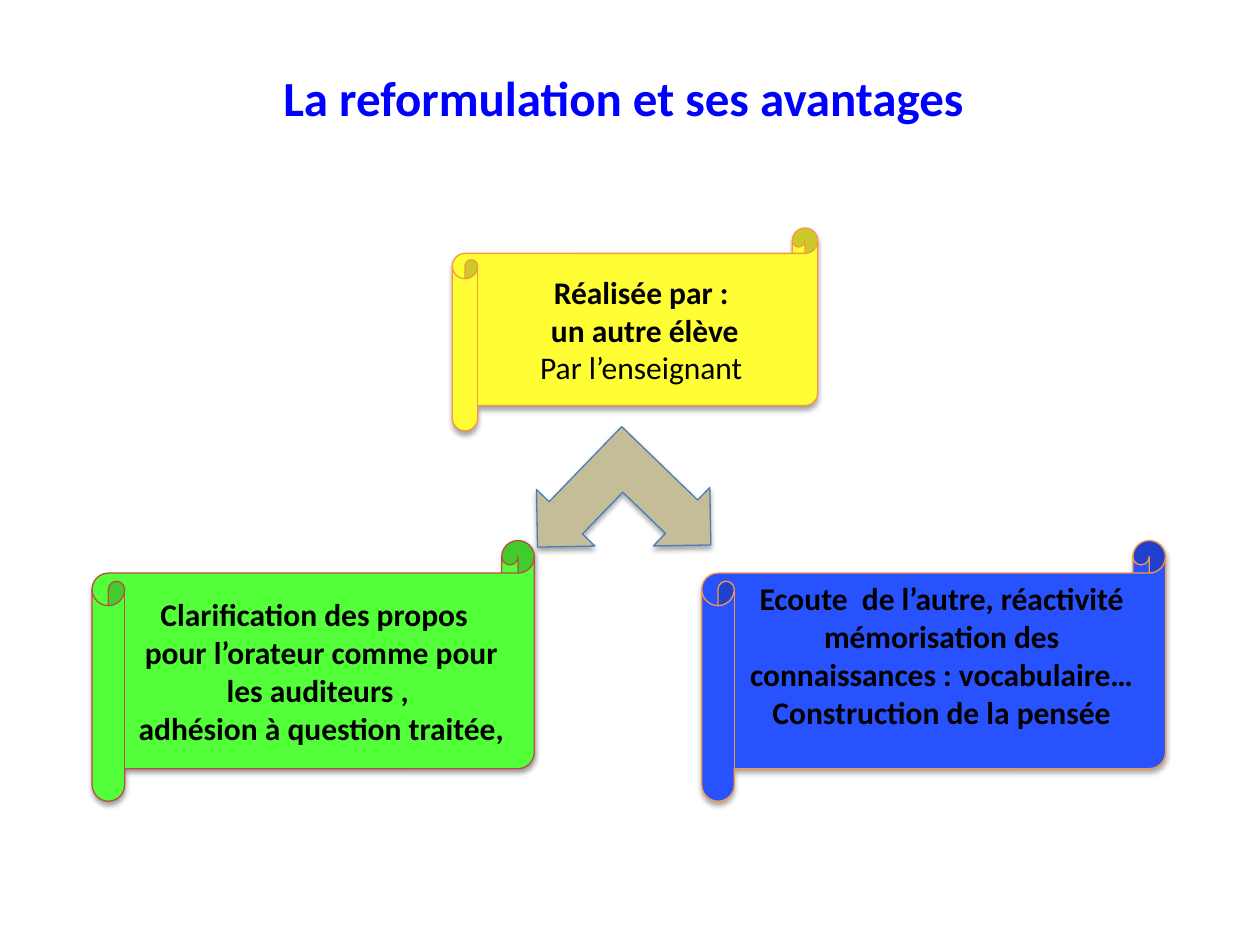
from lxml import etree
from pptx import Presentation
from pptx.dml.color import RGBColor
from pptx.enum import shapes, text
from pptx.oxml import ns
from pptx.util import Pt


def rgb(value):
    return RGBColor.from_string(value)


def style(sp, fill, line, alpha=35, dist=1.8):
    """Fill, outline and soft shadow straight below the shape."""
    sp.fill.solid()
    sp.fill.fore_color.rgb = rgb(fill)
    sp.line.color.rgb = rgb(line)
    sp.line.width = Pt(0.75)
    sp.shadow.inherit = False
    effects = sp._element.spPr.find(ns.qn("a:effectLst"))
    shadow = etree.SubElement(effects, ns.qn("a:outerShdw"), blurRad=str(Pt(3.1)),
                              dist=str(Pt(dist)), dir="5400000", rotWithShape="0")
    color = etree.SubElement(shadow, ns.qn("a:srgbClr"), val="000000")
    etree.SubElement(color, ns.qn("a:alpha"), val=str(alpha * 1000))


prs = Presentation()
prs.slide_width, prs.slide_height = Pt(720), Pt(540)
s = prs.slides.add_slide(prs.slide_layouts[6])

# Title
tf = s.shapes.add_textbox(Pt(86.4), Pt(35.3), Pt(545.8), Pt(40.3)).text_frame
tf.word_wrap = True
p = tf.paragraphs[0]
p.text = "La reformulation et ses avantages "
p.alignment = text.PP_ALIGN.CENTER
p.font.name, p.font.size, p.font.bold = "Calibri", Pt(28), True
p.font.color.rgb = rgb("0000FF")

# Scrolls: box, fill, line, shadow opacity and distance, anchor, (text, bold) lines
MIDDLE, TOP = text.MSO_ANCHOR.MIDDLE, text.MSO_ANCHOR.TOP
scrolls = [
    ((258.5, 130.3, 208.8, 115.9), "FFFD33", "F79646", 35, 1.8, MIDDLE,
     [("Réalisée par :", True),
      (" un autre élève", True),
      ("Par l’enseignant", False)]),
    ((52.6, 308.9, 252.7, 149), "53FF38", "BE4B48", 38, 1.6, MIDDLE,
     [("Clarification des propos  ", True),
      ("pour l’orateur comme pour les auditeurs , ", True),
      ("adhésion à question traitée,", True)]),
    ((401, 308.9, 265, 149), "2952FF", "F79646", 35, 1.8, TOP,
     [("Ecoute  de l’autre, réactivité mémorisation des connaissances : vocabulaire…", True),
      ("Construction de la pensée", True)]),
]
for box, fill, line, alpha, dist, anchor, lines in scrolls:
    sp = s.shapes.add_shape(shapes.MSO_SHAPE.HORIZONTAL_SCROLL, *map(Pt, box))
    style(sp, fill, line, alpha, dist)
    tf = sp.text_frame
    tf.word_wrap = True
    tf.vertical_anchor = anchor
    for i, (words, bold) in enumerate(lines):
        p = tf.add_paragraph() if i else tf.paragraphs[0]
        p.text = words
        p.alignment = text.PP_ALIGN.CENTER
        p.font.name, p.font.size, p.font.bold = "Calibri", Pt(18), bold
        p.font.color.rgb = rgb("000000")

# Double arrow from the top scroll to the two lower ones
sp = s.shapes.add_shape(shapes.MSO_SHAPE.LEFT_UP_ARROW, Pt(309.6), Pt(249.1), Pt(93.6), Pt(92.9))
sp.rotation = 224
sp.adjustments[0] = 0.285
style(sp, "C4BD97", "4A7EBB")

prs.save("out.pptx")
